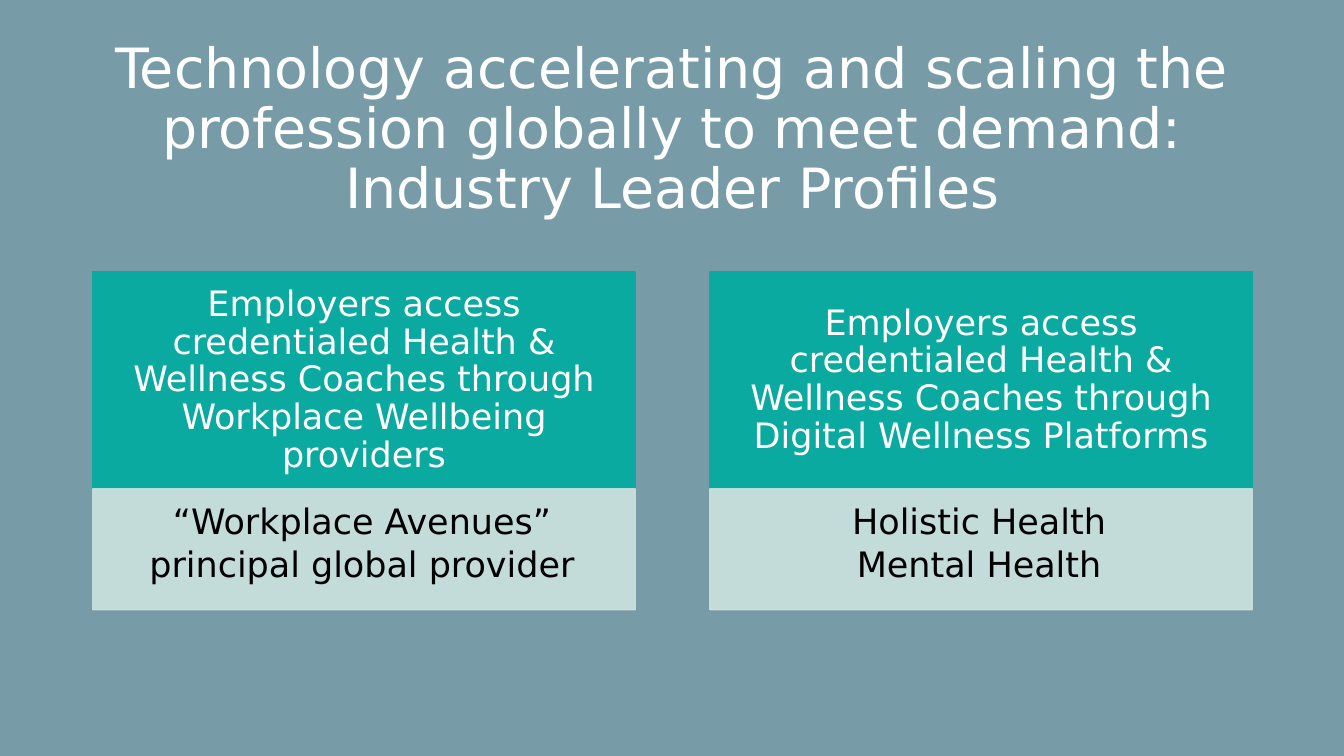
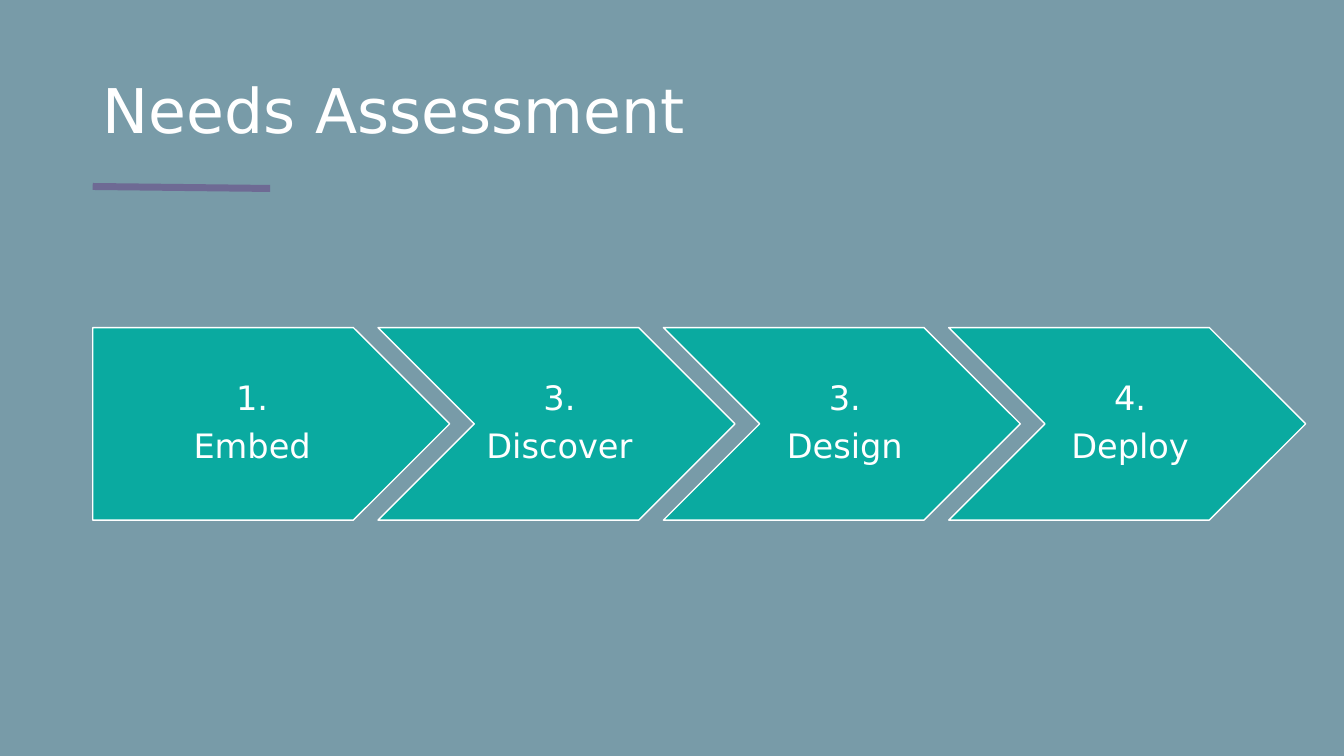
from lxml import etree
from pptx import Presentation
from pptx import util as u
from pptx.dml.color import RGBColor
from pptx.enum import shapes, text
from pptx.oxml.ns import qn

SLATE = RGBColor(0x78, 0x9B, 0xA8)
TEAL = RGBColor(0x0A, 0xAA, 0xA0)
MINT = RGBColor(0xCC, 0xE2, 0xDF)
PURPLE = RGBColor(0x6E, 0x6A, 0x94)
WHITE = RGBColor(0xFF, 0xFF, 0xFF)
BLACK = RGBColor(0, 0, 0)
FONT = "DejaVu Sans"
LEFT = 0.92


def write(box, lines, size, color, align, margins, gap=0.0):
    frame = box.text_frame
    frame.word_wrap = True
    frame.vertical_anchor = text.MSO_ANCHOR.MIDDLE
    frame.margin_left, frame.margin_top, frame.margin_right, frame.margin_bottom = [
        u.Inches(margin) for margin in margins]
    frame.text = "\n".join(lines)
    for para in frame.paragraphs:
        para.alignment = align
        para.line_spacing = 0.9
        para.space_after = u.Pt(size * gap)
        for span in para.runs:
            span.font.name = FONT
            span.font.size = u.Pt(size)
            span.font.color.rgb = color


def add_block(page, kind, left, top, width, height, fill, line):
    block = page.shapes.add_shape(kind, u.Inches(left), u.Inches(top),
                                  u.Inches(width), u.Inches(height))
    block.shadow.inherit = False
    block.fill.solid()
    block.fill.fore_color.rgb = fill
    block.line.color.rgb = line
    block.line.width = u.Pt(1)
    return block


deck = Presentation()
deck.slide_width = u.Inches(13.33)
deck.slide_height = u.Inches(7.5)
background = deck.slide_master.background.fill
background.solid()
background.fore_color.rgb = SLATE

CENTER = text.PP_ALIGN.CENTER
titles = [
    ("Technology accelerating and scaling the profession globally to meet demand: "
     "Industry Leader Profiles", 1.79, 39.6, CENTER),
    ("Needs Assessment", 1.45, 44, text.PP_ALIGN.LEFT),
]
pages = []
for title, height, size, align in titles:
    page = deck.slides.add_slide(deck.slide_layouts[6])
    box = page.shapes.add_textbox(u.Inches(LEFT), u.Inches(0.4), u.Inches(11.5), u.Inches(height))
    write(box, [title], size, WHITE, align, (0.1, 0.05, 0.1, 0.05))
    pages.append(page)
profiles, assessment = pages

columns = [
    ("Workplace Wellbeing providers", ["“Workplace Avenues”", "principal global provider"]),
    ("Digital Wellness Platforms", ["Holistic Health", "Mental Health"]),
]
RECTANGLE = shapes.MSO_SHAPE.RECTANGLE
for index, (channel, details) in enumerate(columns):
    left = LEFT + index * 6.12
    header = add_block(profiles, RECTANGLE, left, 2.7, 5.38, 2.15, TEAL, TEAL)
    write(header, [f"Employers access credentialed Health & Wellness Coaches through {channel}"],
          25, WHITE, CENTER, (0.19, 0.11, 0.19, 0.11), 0.35)
    body = add_block(profiles, RECTANGLE, left, 4.85, 5.38, 1.2, MINT, MINT)
    write(body, details, 25, BLACK, CENTER, (0.15, 0.15, 0.19, 0.22), 0.15)
    body.text_frame.vertical_anchor = text.MSO_ANCHOR.TOP
    for color in body.element.spPr.iter(qn("a:srgbClr")):
        etree.SubElement(color, qn("a:alpha"), val="90000")

steps = [("1.", "Embed"), ("3.", "Discover"), ("3.", "Design"), ("4.", "Deploy")]
for index, step in enumerate(steps):
    first = index == 0
    kind = shapes.MSO_SHAPE.PENTAGON if first else shapes.MSO_SHAPE.CHEVRON
    arrow = add_block(assessment, kind, LEFT + index * 2.83, 3.25, 3.54, 1.91, TEAL, WHITE)
    write(arrow, step, 24, WHITE, CENTER, (0.14 if first else 0.1, 0.07, 0.04, 0.07), 0.35)

accent = assessment.shapes.add_connector(shapes.MSO_CONNECTOR.STRAIGHT, u.Inches(LEFT),
                                         u.Inches(1.85), u.Inches(2.68), u.Inches(1.87))
accent.line.color.rgb = PURPLE
accent.line.width = u.Pt(5)
etree.SubElement(accent.element.spPr, qn("a:effectLst"))

deck.save("out.pptx")
